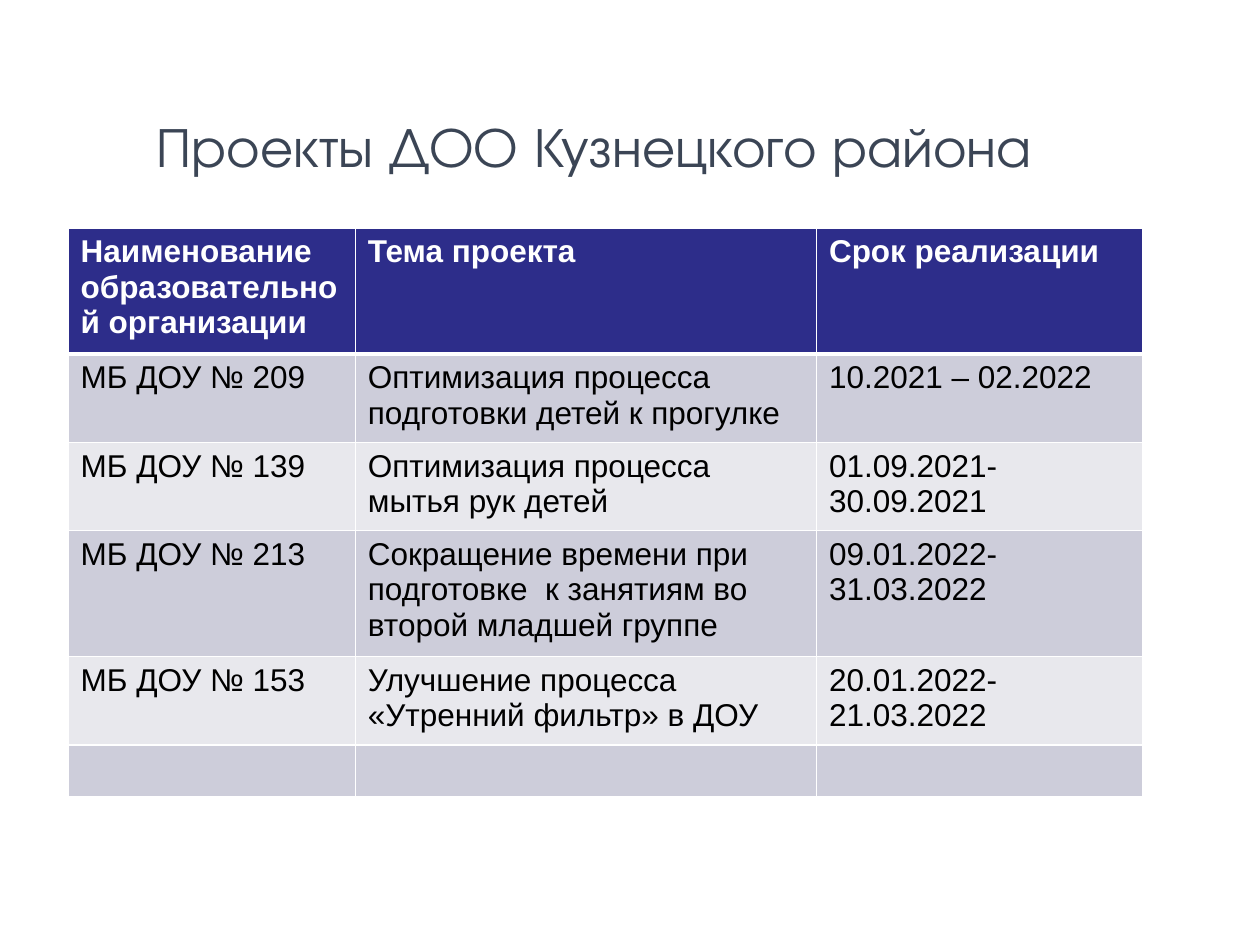
from dataclasses import dataclass

from lxml.etree import SubElement
from pptx import Presentation
from pptx.dml.color import RGBColor
from pptx.enum.text import MSO_ANCHOR, PP_ALIGN
from pptx.oxml.ns import qn
from pptx.util import Inches, Pt


@dataclass(frozen=True)
class Theme:
    """Colours, fonts and type sizes of the slide."""
    title_color: str = "3B4555"
    header_fill: str = "2D2D8A"
    band_fills: tuple = ("CDCDDA", "E8E8ED")
    white: str = "FFFFFF"
    black: str = "000000"
    title_font: str = "TeX Gyre Adventor"
    table_font: str = "Arial"
    title_size: int = 32
    table_size: int = 18
    line: int = 1
    header_line: int = 3


THEME = Theme()
TITLE = "Проекты ДОО Кузнецкого района"
COL_WIDTHS = (2.28, 3.66, 2.59)
ROW_HEIGHTS = (0.94, 0.66, 0.66, 0.94, 0.66, 0.41)
ROWS = (
    ("Наименование образовательной организации", "Тема проекта", "Срок реализации"),
    ("МБ ДОУ № 209", "Оптимизация процесса подготовки детей к прогулке", "10.2021 – 02.2022"),
    ("МБ ДОУ № 139", "Оптимизация процесса мытья рук детей", "01.09.2021-30.09.2021"),
    ("МБ ДОУ № 213", "Сокращение времени при подготовке  к занятиям во второй младшей группе",
     "09.01.2022-31.03.2022"),
    ("МБ ДОУ № 153", "Улучшение процесса «Утренний фильтр» в ДОУ", "20.01.2022-21.03.2022"),
    ("", "", ""),
)


def set_font(p, color, **formats):
    """Apply a colour and font values to a paragraph."""
    for name, value in formats.items():
        setattr(p.font, name, value)
    p.font.color.rgb = RGBColor.from_string(color)


def add_title(slide):
    """Add the centred heading."""
    sp = slide.shapes.add_textbox(Inches(0.72), Inches(0.83), Inches(8), Inches(0.64))
    tf = sp.text_frame
    tf.word_wrap = True
    tf.vertical_anchor = MSO_ANCHOR.MIDDLE
    p = tf.paragraphs[0]
    p.text = TITLE
    p.alignment = PP_ALIGN.CENTER
    set_font(p, THEME.title_color, name=THEME.title_font, size=Pt(THEME.title_size))


def set_borders(cell, top, bottom):
    """Draw white lines on the four sides of a cell."""
    tc_pr = cell._tc.get_or_add_tcPr()
    widths = {"lnL": THEME.line, "lnR": THEME.line, "lnT": top, "lnB": bottom}
    for side, width in widths.items():
        ln = SubElement(tc_pr, qn(f"a:{side}"), w=str(Pt(width)))
        fill = SubElement(ln, qn("a:solidFill"))
        SubElement(fill, qn("a:srgbClr"), val=THEME.white)


def format_cell(cell, text, row):
    """Write a cell and style it by its row number."""
    header = row == 0
    set_borders(cell, THEME.header_line if row == 1 else THEME.line,
                THEME.header_line if header else THEME.line)
    cell.fill.solid()
    fill = THEME.header_fill if header else THEME.band_fills[(row - 1) % 2]
    cell.fill.fore_color.rgb = RGBColor.from_string(fill)
    p = cell.text_frame.paragraphs[0]
    p.text = text
    set_font(p, THEME.white if header else THEME.black, name=THEME.table_font,
             size=Pt(THEME.table_size), bold=header)


def add_projects_table(slide):
    """Add the table of projects."""
    table = slide.shapes.add_table(
        len(ROWS), len(COL_WIDTHS), Inches(0.54), Inches(1.81),
        Inches(sum(COL_WIDTHS)), Inches(sum(ROW_HEIGHTS))).table
    for column, width in zip(table.columns, COL_WIDTHS):
        column.width = Inches(width)
    for i, (row, height, texts) in enumerate(zip(table.rows, ROW_HEIGHTS, ROWS)):
        row.height = Inches(height)
        for cell, text in zip(row.cells, texts):
            format_cell(cell, text, i)


def main():
    """Build and save the slide."""
    prs = Presentation()
    prs.slide_width, prs.slide_height = Inches(10), Inches(7.5)
    s = prs.slides.add_slide(prs.slide_layouts[6])
    add_title(s)
    add_projects_table(s)
    prs.save("out.pptx")


if __name__ == "__main__":
    main()
